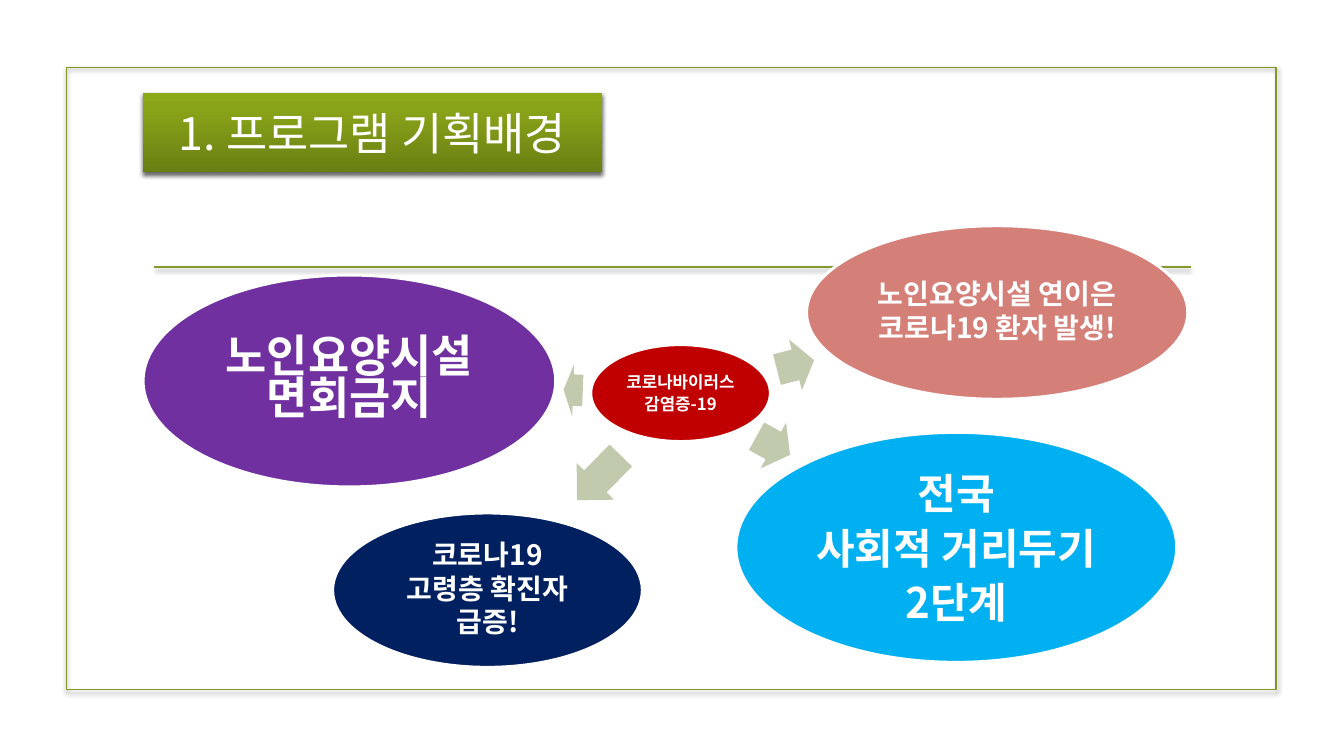
"""Build the slide on the background of the programme."""
from copy import deepcopy

from lxml import etree
from pptx import Presentation
from pptx.dml.color import RGBColor
from pptx.enum.shapes import MSO_CONNECTOR, MSO_SHAPE
from pptx.enum.text import MSO_ANCHOR, PP_ALIGN
from pptx.oxml.ns import qn
from pptx.util import Inches, Pt

FONT = "Noto Sans CJK KR"
WHITE = RGBColor(0xFF, 0xFF, 0xFF)
OLIVE = RGBColor(0x82, 0x98, 0x26)
GREEN = RGBColor(0x83, 0x99, 0x2A)
SAGE = RGBColor(0xC1, 0xCA, 0xAD)
RED = RGBColor(0xC0, 0x00, 0x00)
PINK = RGBColor(0xD4, 0x7F, 0x77)
SKY = RGBColor(0x00, 0xB0, 0xF0)
NAVY = RGBColor(0x00, 0x20, 0x60)
PURPLE = RGBColor(0x70, 0x30, 0xA0)
SHADES = [
    (0, RGBColor(0x69, 0x7F, 0x13)),
    (0.8, RGBColor(0x89, 0xA4, 0x19)),
    (1, RGBColor(0x8B, 0xA8, 0x16)),
]


def shade(item, alpha):
    props = item._element.spPr
    effects = props.find(qn("a:effectLst"))
    if effects is None:
        effects = etree.SubElement(props, qn("a:effectLst"))
    outer = etree.SubElement(effects, qn("a:outerShdw"), blurRad=str(Pt(3.1)),
                             dist=str(Pt(1.8)), dir="5400000", rotWithShape="0")
    color = etree.SubElement(outer, qn("a:srgbClr"), val="000000")
    etree.SubElement(color, qn("a:alpha"), val=str(alpha * 1000))


def write(shape, lines, size, bold, spacing, gap):
    frame = shape.text_frame
    frame.word_wrap = True
    frame.vertical_anchor = MSO_ANCHOR.MIDDLE
    frame.margin_left = frame.margin_right = Inches(0.02)
    frame.margin_top = frame.margin_bottom = Inches(0.02)
    frame.text = "\n".join(lines)
    for para in frame.paragraphs:
        para.alignment = PP_ALIGN.CENTER
        para.line_spacing = spacing
        para.space_after = Pt(gap)
        para.font.name = FONT
        para.font.size = Pt(size)
        para.font.bold = bold
        para.font.color.rgb = WHITE


deck = Presentation()
deck.slide_width, deck.slide_height = Inches(13.33), Inches(7.5)
slide = deck.slides.add_slide(deck.slide_layouts[6])
shapes = slide.shapes

border = shapes.add_shape(MSO_SHAPE.RECTANGLE, Inches(0.66), Inches(0.67),
                          Inches(12), Inches(6.17))
border.shadow.inherit = False
border.fill.background()
border.line.color.rgb = OLIVE
border.line.width = Pt(1.25)
shade(border, 35)

rule = shapes.add_connector(MSO_CONNECTOR.STRAIGHT, Inches(1.53), Inches(2.65),
                            Inches(11.81), Inches(2.65))
rule.line.color.rgb = GREEN
rule.line.width = Pt(1.25)
shade(rule, 38)

arrows = [
    (7.7, 3.36, 0.38, 345.7),
    (7.48, 4.16, 0.38, 29.1),
    (5.63, 4.48, 0.62, 134.4),
    (5.59, 3.61, 0.19, 182.2),
]
for left, top, width, turn in arrows:
    arrow = shapes.add_shape(MSO_SHAPE.RIGHT_ARROW, Inches(left), Inches(top),
                             Inches(width), Inches(0.52))
    arrow.adjustments[0] = 0.6
    arrow.adjustments[1] = 0.5
    arrow.rotation = turn
    arrow.shadow.inherit = False
    arrow.fill.solid()
    arrow.fill.fore_color.rgb = SAGE
    arrow.line.fill.background()

ovals = [
    (5.86, 3.42, 1.78, 0.96, RED, 12, 1, 1.2, ["코로나바이러스", "감염증-19"]),
    (8, 2.24, 3.78, 1.72, PINK, 20, 0.9, 2.5,
     ["노인요양시설 연이은", "코로나19 환자 발생!"]),
    (7.3, 4.29, 4.37, 2.28, SKY, 30, 1, 3, ["전국", "사회적 거리두기", "2단계"]),
    (3.3, 5.09, 3.07, 1.53, NAVY, 20, 0.9, 2.5,
     ["코로나19", "고령층 확진자", "급증!"]),
    (1.42, 2.73, 4.09, 2.1, PURPLE, 32, 0.77, 0, ["노인요양시설 면회금지"]),
]
for left, top, width, height, color, size, spacing, gap, lines in ovals:
    oval = shapes.add_shape(MSO_SHAPE.OVAL, Inches(left), Inches(top),
                            Inches(width), Inches(height))
    oval.shadow.inherit = False
    oval.fill.solid()
    oval.fill.fore_color.rgb = color
    oval.line.color.rgb = WHITE
    oval.line.width = Pt(2)
    write(oval, lines, size, True, spacing, gap)

title = shapes.add_shape(MSO_SHAPE.RECTANGLE, Inches(1.42), Inches(0.92),
                         Inches(4.55), Inches(0.79))
title.shadow.inherit = False
title.line.fill.background()
title.fill.gradient()
title.fill.gradient_angle = 90
stops = title._element.spPr.find(qn("a:gradFill")).find(qn("a:gsLst"))
stops.append(deepcopy(stops[0]))
for stop, (place, color) in zip(title.fill.gradient_stops, SHADES):
    stop.position = place
    stop.color.rgb = color
shade(title, 60)
write(title, ["1. 프로그램 기획배경"], 32, False, 1, 0)

deck.save("out.pptx")
